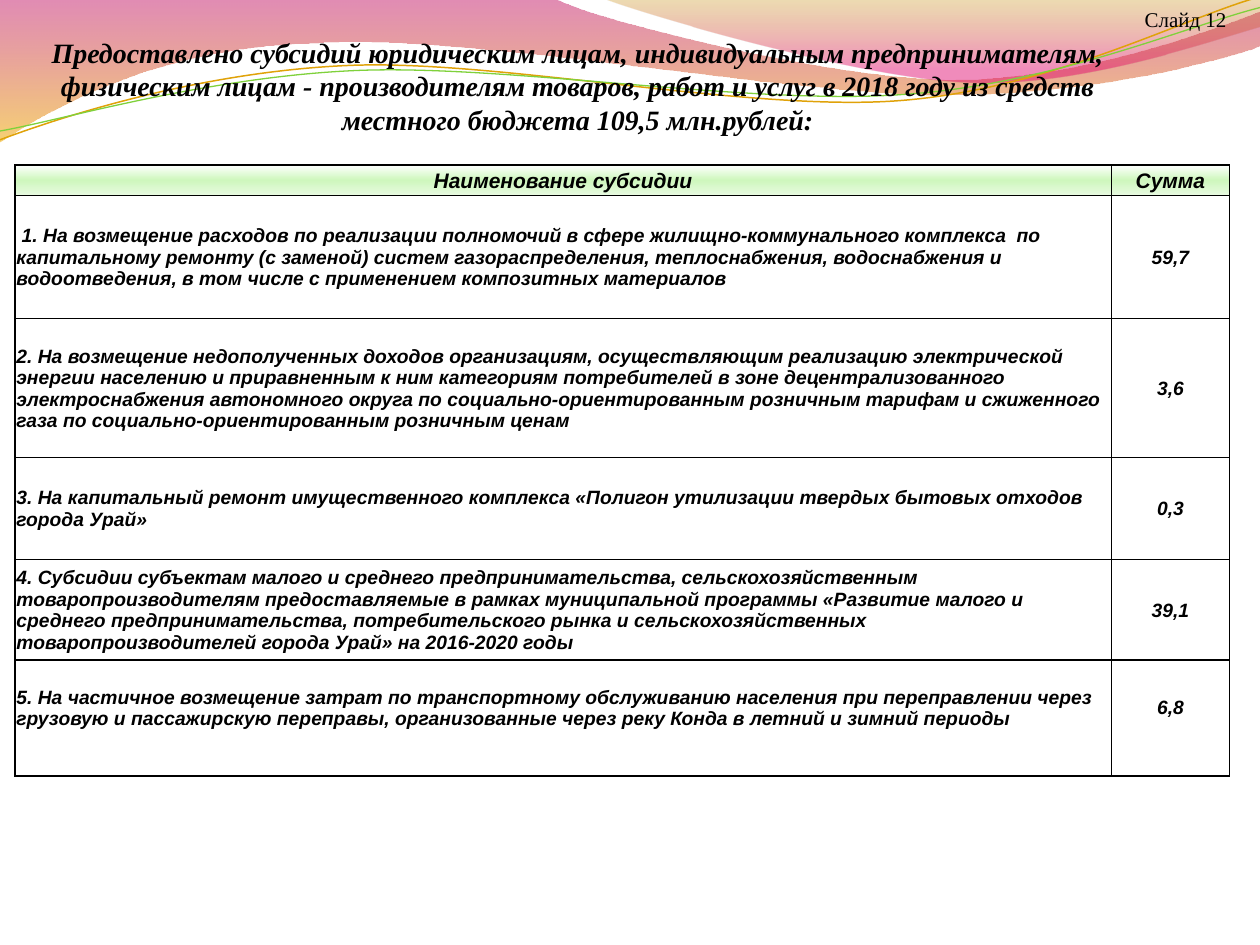
from lxml import etree
from pptx import Presentation
from pptx.dml.color import RGBColor
from pptx.enum.text import MSO_ANCHOR, PP_ALIGN
from pptx.oxml.ns import qn
from pptx.util import Inches, Pt

CENTER, LEFT = PP_ALIGN.CENTER, PP_ALIGN.LEFT
MIDDLE = MSO_ANCHOR.MIDDLE
SERIF, SANS = "Times New Roman", "Arial"
BLACK = "000000"

PINK = [(0, 0), (4.4, -0.01), (4.76, 0.17, 6.64, 0.63, 7.58, 0.63),
        (8.53, 0.63, 9.58, 0.26, 10, 0.09), (10.01, 0.36),
        (9.83, 0.44, 8.7, 0.76, 7.46, 0.75), (6.22, 0.75, 3.82, 0.28, 2.57, 0.34),
        (1.29, 0.36, 0.46, 0.83, -0.01, 1.13), (0, 0)]
GOLD = [(4.79, -0.01), (5.09, 0.11, 6.82, 0.62, 7.69, 0.65),
        (8.56, 0.69, 9.61, 0.32, 10, 0.21), (10, 0), (4.79, -0.01)]
AMBER = [(0, 1.11), (0.48, 0.93, 1.58, 0.57, 2.77, 0.52),
         (3.95, 0.47, 5.93, 0.89, 7.13, 0.8), (8.33, 0.71, 9.38, 0.15, 9.98, -0.02)]
GREEN = [(0, 1.04), (0.47, 0.96, 1.64, 0.61, 2.83, 0.56),
         (4.03, 0.51, 5.97, 0.84, 7.17, 0.75), (8.36, 0.67, 9.41, 0.21, 10, 0.06)]

TITLE = ("Предоставлено субсидий юридическим лицам, индивидуальным предпринимателям, "
         "физическим лицам - производителям товаров, работ и услуг в 2018 году из средств "
         "местного бюджета 109,5 млн.рублей:")
ROWS = [
    ("Наименование субсидии", "Сумма", 0.24),
    (" 1. На возмещение расходов по реализации полномочий в сфере жилищно-коммунального "
     "комплекса  по капитальному ремонту (с заменой) систем газораспределения, "
     "теплоснабжения, водоснабжения и водоотведения, в том числе с применением "
     "композитных материалов", "59,7", 0.98),
    ("2. На возмещение недополученных доходов организациям, осуществляющим реализацию "
     "электрической энергии населению и приравненным к ним категориям потребителей в зоне "
     "децентрализованного электроснабжения автономного округа по социально-ориентированным "
     "розничным тарифам и сжиженного газа по социально-ориентированным розничным ценам",
     "3,6", 1.1),
    ("3. На капитальный ремонт имущественного комплекса «Полигон утилизации твердых "
     "бытовых отходов города Урай»", "0,3", 0.81),
    ("4. Субсидии субъектам малого и среднего предпринимательства, сельскохозяйственным "
     "товаропроизводителям предоставляемые в рамках муниципальной программы «Развитие "
     "малого и среднего предпринимательства, потребительского рынка и сельскохозяйственных "
     "товаропроизводителей города Урай» на 2016-2020 годы", "39,1", 0.8),
    ("5. На частичное возмещение затрат по транспортному обслуживанию населения при "
     "переправлении через грузовую и пассажирскую переправы, организованные через реку "
     "Конда в летний и зимний периоды", "6,8", 0.92),
]
HEAD = [(0, "FFFFFF", 100), (50, "CEF7BD", 100), (100, "E7FADF", 100)]


def color(code):
    """Turn a hex string into a colour."""
    return RGBColor.from_string(code)


def node(parent, tag, **attrs):
    """Append a child element with the given attributes."""
    return etree.SubElement(parent, qn(tag), {k: str(v) for k, v in attrs.items()})


def blend(owner, props, stops):
    """Give a shape or cell a downward gradient of (place, colour, opacity) stops."""
    owner.fill.background()
    old = props.find(qn("a:noFill"))
    grad = etree.Element(qn("a:gradFill"), rotWithShape="1")
    items = node(grad, "a:gsLst")
    for place, code, alpha in stops:
        stop = node(items, "a:gs", pos=place * 1000)
        tint = node(stop, "a:srgbClr", val=code)
        if alpha < 100:
            node(tint, "a:alpha", val=alpha * 1000)
    node(grad, "a:lin", ang=5400000, scaled=0)
    props.replace(old, grad)


def outline(slide, pieces, close):
    """Draw a freeform from line ends and Bezier triples."""
    points = [(Inches(p[i]), Inches(p[i + 1])) for p in pieces for i in range(0, len(p), 2)]
    pen = slide.shapes.build_freeform(*points[0])
    pen.add_line_segments(points[1:], close=close)
    shape = pen.convert_to_shape()
    shape.shadow.inherit = False
    lines = iter(list(shape.element.spPr.iter(qn("a:lnTo"))))
    for piece in pieces[1:]:
        line = next(lines)
        if len(piece) == 6:
            line.addprevious(bend := etree.Element(qn("a:cubicBezTo")))
            for part in (line, next(lines), next(lines)):
                bend.append(part[0])
                part.getparent().remove(part)
    return shape


def wave(slide, pieces, stops):
    """Add a filled wave without a border."""
    shape = outline(slide, pieces, True)
    blend(shape, shape.element.spPr, stops)
    shape.line.fill.background()


def curve(slide, pieces, code, width):
    """Add an open curved line."""
    shape = outline(slide, pieces, False)
    shape.fill.background()
    shape.line.color.rgb = color(code)
    shape.line.width = Pt(width)


def write(frame, text, size, face, align, bold):
    """Fill a text frame with one formatted paragraph."""
    frame.text = text
    para = frame.paragraphs[0]
    para.alignment = align
    font = para.runs[0].font
    font.size, font.name = Pt(size), face
    font.bold = font.italic = bold
    font.color.rgb = color(BLACK)


def label(slide, box, text, size, bold, top, wrap):
    """Add a centred serif text box."""
    frame = slide.shapes.add_textbox(*map(Inches, box)).text_frame
    frame.word_wrap = wrap
    frame.margin_top = Inches(top)
    write(frame, text, size, SERIF, CENTER, bold)


def border(cell, widths):
    """Set left, right, top and bottom cell borders in points."""
    props = cell._tc.get_or_add_tcPr()
    for i, (side, width) in enumerate(zip("LRTB", widths)):
        line = etree.Element(qn(f"a:ln{side}"), w=str(Pt(width)))
        node(node(line, "a:solidFill"), "a:srgbClr", val=BLACK)
        props.insert(i, line)


def fill_cell(cell, text, row, col):
    """Write and style one table cell."""
    head, last = row == 0, row == len(ROWS) - 1
    write(cell.text_frame, text, 12 if head else 11, SANS,
          CENTER if head or col else LEFT, True)
    cell.vertical_anchor = MIDDLE
    cell.margin_left = cell.margin_right = cell.margin_top = Inches(0.01)
    cell.margin_bottom = Inches(0.17 if last else 0)
    if head:
        blend(cell, cell._tc.get_or_add_tcPr(), HEAD)
    else:
        cell.fill.background()
    border(cell, (0.5 if col else 1, 0.5, 1 if row in (0, 4, 5) else 0.5,
                  1 if row in (3, 4, 5) else 0.5))


def grid(slide):
    """Add the table of subsidies."""
    high = sum(row[2] for row in ROWS)
    box = map(Inches, (0.12, 1.31, 9.64, high))
    table = slide.shapes.add_table(len(ROWS), 2, *box).table
    table.first_row = table.horz_banding = False
    for col, width in enumerate((8.7, 0.94)):
        table.columns[col].width = Inches(width)
    for row, (name, amount, height) in enumerate(ROWS):
        table.rows[row].height = Inches(height)
        for col, text in enumerate((name, amount)):
            fill_cell(table.cell(row, col), text, row, col)


def main():
    """Build and save the slide."""
    deck = Presentation()
    deck.slide_width, deck.slide_height = Inches(10), Inches(7.5)
    slide = deck.slides.add_slide(deck.slide_layouts[6])
    wave(slide, PINK, [(0, "BD0059", 45), (100, "F0AB00", 55)])
    wave(slide, GOLD, [(0, "C38B00", 30), (80, "E1006B", 45)])
    curve(slide, AMBER, "E0A209", 0.85)
    curve(slide, GREEN, "7FD13B", 0.75)
    label(slide, (0, 0, 9.17, 2.59), TITLE, 16, True, 0.28, True)
    grid(slide)
    label(slide, (8.98, 0, 0.86, 0.3), "Слайд 12", 12, False, 0.05, False)
    deck.save("out.pptx")


if __name__ == "__main__":
    main()
